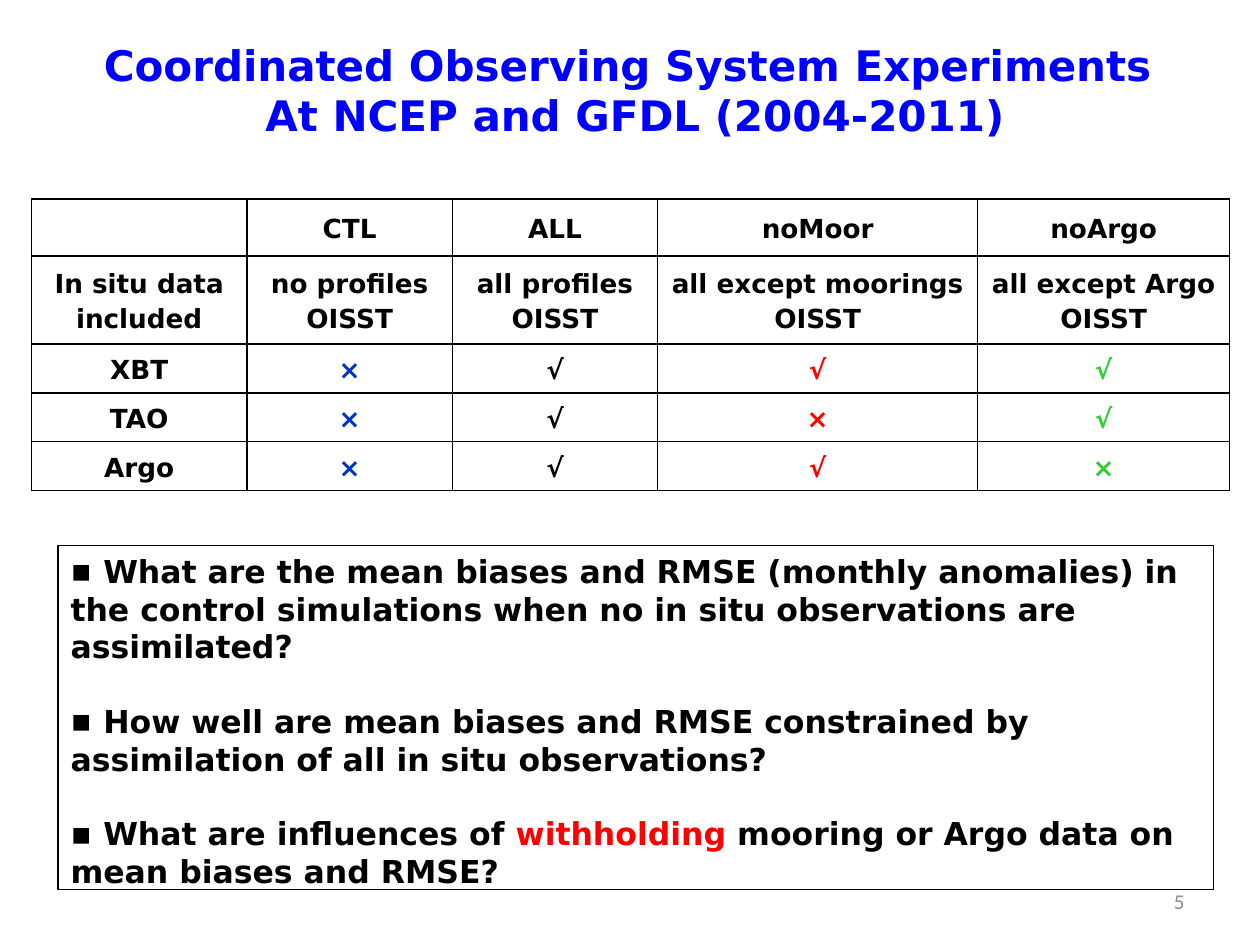
import pptx
import pptx.util
from pptx.dml.color import RGBColor
from pptx.enum.text import MSO_ANCHOR, MSO_AUTO_SIZE, PP_ALIGN
from pptx.oxml import parse_xml
from pptx.oxml.ns import nsdecls
from pptx.util import Inches

BLACK = RGBColor(0x00, 0x00, 0x00)
TITLE_BLUE = RGBColor(0x00, 0x00, 0xFF)
BLUE = RGBColor(0x00, 0x33, 0xCC)
RED = RGBColor(0xFF, 0x00, 0x00)
GREEN = RGBColor(0x33, 0xCC, 0x33)
GRAY = RGBColor(0x8C, 0x8C, 0x8C)
FONT = "DejaVu Sans"

# Content
TITLE = ["Coordinated Observing System Experiments ", "At NCEP and GFDL (2004-2011)"]
TABLE = [
    ["", "CTL", "ALL", "noMoor", "noArgo"],
    ["In situ data\nincluded", "no profiles\nOISST", "all profiles\nOISST",
     "all except moorings\nOISST", "all except Argo\nOISST"],
    ["XBT", "×", "√", "√", "√"],
    ["TAO", "×", "√", "×", "√"],
    ["Argo", "×", "√", "√", "×"],
]
MARK_COLORS = [BLACK, BLUE, BLACK, RED, GREEN]
FIRST_MARK_ROW = 2
COLUMN_WIDTHS = [1.71, 1.63, 1.63, 2.54, 2.0]
ROW_HEIGHTS = [0.45, 0.7, 0.38, 0.38, 0.38]
# Each question is a list of (text, colour) runs; None keeps the paragraph colour
QUESTIONS = [
    [("What are the mean biases and RMSE (monthly anomalies) in the control "
      "simulations when no in situ observations are assimilated?", None)],
    [("How well are mean biases and RMSE constrained by assimilation of all "
      "in situ observations?", None)],
    [("What are influences of ", None), ("withholding", RED),
     (" mooring or Argo data on mean biases and RMSE?", None)],
]


def place(shape, left, top, width, height):
    shape.left, shape.top = Inches(left), Inches(top)
    shape.width, shape.height = Inches(width), Inches(height)


def set_font(paragraph, size, color, bold=True, name=FONT):
    font = paragraph.font
    font.name, font.size, font.bold = name, pptx.util.Pt(size), bold
    font.color.rgb = color


def add_borders(cell):
    properties = cell._tc.get_or_add_tcPr()
    for position, side in enumerate(("lnL", "lnR", "lnT", "lnB")):
        properties.insert(position, parse_xml(
            f'<a:{side} {nsdecls("a")} w="12700"><a:solidFill>'
            f'<a:srgbClr val="{BLACK}"/></a:solidFill></a:{side}>'))


def add_bullet(paragraph):
    """Bullet at the margin, with a tab stop where the first line starts."""
    properties = paragraph._p.get_or_add_pPr()
    properties.set("marL", "0")
    properties.set("indent", "0")
    for xml in (f'<a:buFont {nsdecls("a")} typeface="{FONT}"/>',
                f'<a:buChar {nsdecls("a")} char="▪"/>',
                f'<a:tabLst {nsdecls("a")}><a:tab pos="{Inches(0.26)}" algn="l"/></a:tabLst>'):
        properties.append(parse_xml(xml))


presentation = pptx.Presentation()
presentation.slide_width, presentation.slide_height = Inches(10), Inches(7.5)
slide = presentation.slides.add_slide(presentation.slide_layouts[1])

# Slide number
number = slide.shapes.add_textbox(Inches(7.17), Inches(6.95), Inches(2.33), Inches(0.4))
number.text_frame.word_wrap = True
number.text_frame.vertical_anchor = MSO_ANCHOR.MIDDLE
number.text_frame.text = "5"
paragraph = number.text_frame.paragraphs[0]
paragraph.alignment = PP_ALIGN.RIGHT
set_font(paragraph, 12, GRAY, bold=False, name="Calibri")

# Title
title = slide.shapes.title
place(title, -0.25, -0.11, 10.58, 1.25)
frame = title.text_frame
frame.auto_size = MSO_AUTO_SIZE.NONE
frame.vertical_anchor = MSO_ANCHOR.MIDDLE
frame.margin_top = Inches(0.44)
frame.text = "\n".join(TITLE)
for paragraph in frame.paragraphs:
    paragraph.alignment = PP_ALIGN.CENTER
    set_font(paragraph, 24, TITLE_BLUE)

# Experiment table
table = slide.shapes.add_table(
    len(TABLE), len(COLUMN_WIDTHS), Inches(0.25), Inches(1.58),
    Inches(sum(COLUMN_WIDTHS)), Inches(sum(ROW_HEIGHTS))).table
table.first_row = table.horz_banding = False
for column, width in zip(table.columns, COLUMN_WIDTHS):
    column.width = Inches(width)
for row, height in zip(table.rows, ROW_HEIGHTS):
    row.height = Inches(height)
for row_index, texts in enumerate(TABLE):
    for column_index, text in enumerate(texts):
        cell = table.cell(row_index, column_index)
        cell.text = text
        cell.fill.background()
        cell.vertical_anchor = MSO_ANCHOR.MIDDLE
        add_borders(cell)
        color = MARK_COLORS[column_index] if row_index >= FIRST_MARK_ROW else BLACK
        for paragraph in cell.text_frame.paragraphs:
            paragraph.alignment = PP_ALIGN.CENTER
            paragraph.line_spacing = 1.15
            set_font(paragraph, 15, color)

# Framed questions
body = slide.placeholders[1]
place(body, 0.46, 4.33, 9.17, 2.83)
body.line.color.rgb = BLACK
body.line.width = pptx.util.Pt(0.75)
frame = body.text_frame
frame.word_wrap = True
frame.auto_size = MSO_AUTO_SIZE.SHAPE_TO_FIT_TEXT
frame.vertical_anchor = MSO_ANCHOR.TOP
for index, question in enumerate(QUESTIONS):
    paragraph = frame.add_paragraph() if index else frame.paragraphs[0]
    paragraph.space_before = pptx.util.Pt(21 if index else 0)
    add_bullet(paragraph)
    set_font(paragraph, 18, BLACK)
    for run_index, (text, color) in enumerate(question):
        run = paragraph.add_run()
        run.text = text if run_index else "\t" + text
        if color is not None:
            run.font.color.rgb = color

presentation.save("out.pptx")
